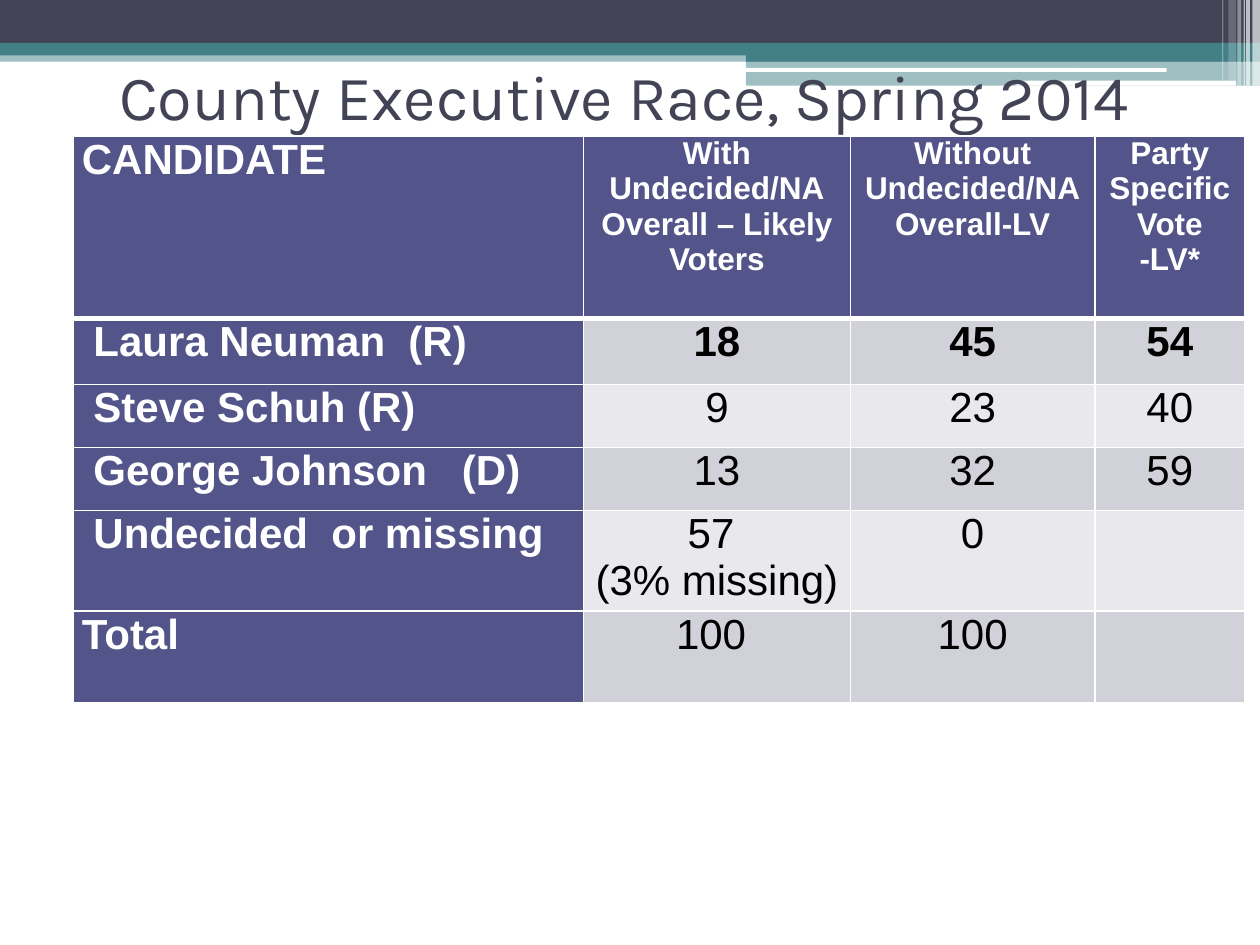
from lxml.etree import SubElement
from pptx import Presentation
from pptx.dml.color import RGBColor
from pptx.enum.shapes import MSO_SHAPE
from pptx.enum.text import MSO_ANCHOR, PP_ALIGN
from pptx.oxml.ns import qn
from pptx.util import Inches, Pt

COLORS = {
    "slate": "424456",
    "teal": "438086",
    "white": "FFFFFF",
    "black": "000000",
    "indigo": "53548A",
    "band_dark": "D1D1DA",
    "band_light": "E9E9ED",
}

# left, top, width, height, color, opacity in percent
BANNER_BARS = [
    (0, 0.4, 10, 0.09, "teal", 50),
    (0, 0, 10, 0.34, "slate", 100),
    (0, 0.34, 10, 0.1, "teal", 100),
    (5.92, 0.39, 4.08, 0.1, "teal", 100),
    (5.92, 0.48, 4.08, 0.2, "teal", 50),
]
BANNER_LINES = [(5.91, 0.54, 3.35, 0.03), (8.06, 0.64, 1.75, 0.04)]
# left, width, height, opacity in percent
BANNER_STRIPES = [
    (9.94, 0.06, 0.68, 65),
    (9.89, 0.03, 0.68, 65),
    (9.87, 0.01, 0.68, 60),
    (9.82, 0.03, 0.68, 40),
    (9.75, 0.06, 0.64, 20),
    (9.7, 0.01, 0.64, 30),
]

COLUMN_WIDTHS = [4.05, 2.12, 1.94, 1.19]
ROW_HEIGHTS = [1.45, 0.52, 0.5, 0.5, 0.73, 0.73]
# "\n" starts a paragraph, "\v" breaks a line
RESULTS = [
    ["CANDIDATE", "With Undecided/NA\nOverall – Likely Voters",
     "Without Undecided/NA\vOverall-LV", "Party Specific Vote -LV*"],
    [" Laura Neuman  (R)", "18", "45", "54"],
    [" Steve Schuh (R)", "9", "23", "40"],
    [" George Johnson   (D)", "13", "32", "59"],
    [" Undecided  or missing", "57 \n(3% missing)", "0", ""],
    ["Total", "100 ", "100", ""],
]


def rgb(color):
    return RGBColor.from_string(COLORS[color])


def write_text(frame, text, *, size, color, font="Arial", bold=False, align=PP_ALIGN.LEFT):
    frame.word_wrap = True
    frame.text = text
    for paragraph in frame.paragraphs:
        paragraph.alignment = align
        for run in paragraph.runs:
            run.font.name = font
            run.font.size = Pt(size)
            run.font.bold = bold
            run.font.color.rgb = rgb(color)


def add_bar(slide, left, top, width, height, color, opacity=100, kind=MSO_SHAPE.RECTANGLE):
    shape = slide.shapes.add_shape(
        kind, Inches(left), Inches(top), Inches(width), Inches(height))
    shape.shadow.inherit = False
    shape.line.fill.background()
    shape.fill.solid()
    shape.fill.fore_color.rgb = rgb(color)
    if opacity < 100:
        color_element = shape.fill._xPr.find(qn("a:solidFill"))[0]
        SubElement(color_element, qn("a:alpha"), val=str(opacity * 1000))


def add_banner(slide, left, top):
    for x, y, width, height, color, opacity in BANNER_BARS:
        add_bar(slide, left + x, top + y, width, height, color, opacity)
    for x, y, width, height in BANNER_LINES:
        add_bar(slide, left + x, top + y, width, height, "white",
                kind=MSO_SHAPE.ROUNDED_RECTANGLE)
    for x, width, height, opacity in BANNER_STRIPES:
        add_bar(slide, left + x, top, width, height, "white", opacity)


def add_title(slide, left, top, width, height):
    box = slide.shapes.add_textbox(Inches(left), Inches(top), Inches(width), Inches(height))
    box.text_frame.vertical_anchor = MSO_ANCHOR.MIDDLE
    write_text(box.text_frame, "County Executive Race, Spring 2014",
               size=36, color="slate", font="Karla", align=PP_ALIGN.CENTER)


def set_borders(cell, top=1, bottom=1):
    """Draw white borders; call before the cell's fill, which must follow them."""
    properties = cell._tc.get_or_add_tcPr()
    for side, width in (("L", 1), ("R", 1), ("T", top), ("B", bottom)):
        line = SubElement(properties, qn(f"a:ln{side}"), w=str(Pt(width)))
        fill = SubElement(line, qn("a:solidFill"))
        SubElement(fill, qn("a:srgbClr"), val=COLORS["white"])


def fill_cell(cell, text, row, column):
    is_label = row == 0 or column == 0
    cell.margin_left = cell.margin_right = Inches(0.07)
    cell.margin_top = cell.margin_bottom = 0
    set_borders(cell, top=3 if row == 1 else 1, bottom=3 if row == 0 else 1)
    cell.fill.solid()
    band = "band_dark" if row % 2 else "band_light"
    cell.fill.fore_color.rgb = rgb("indigo" if is_label else band)
    write_text(cell.text_frame, text,
               size=18 if row == 0 and column > 0 else 24,
               color="white" if is_label else "black",
               bold=is_label or row == 1,
               align=PP_ALIGN.CENTER if column else PP_ALIGN.LEFT)


def add_results_table(slide, left, top):
    table = slide.shapes.add_table(
        len(ROW_HEIGHTS), len(COLUMN_WIDTHS), Inches(left), Inches(top),
        Inches(sum(COLUMN_WIDTHS)), Inches(sum(ROW_HEIGHTS))).table
    for column, width in zip(table.columns, COLUMN_WIDTHS):
        column.width = Inches(width)
    for row, height in zip(table.rows, ROW_HEIGHTS):
        row.height = Inches(height)
    # Row 5 shares the dark band with the odd rows
    for row, texts in enumerate(RESULTS):
        for column, text in enumerate(texts):
            fill_cell(table.cell(row, column), text, row, column)


def main():
    presentation = Presentation()
    presentation.slide_width = Inches(10)
    presentation.slide_height = Inches(7.5)
    slide = presentation.slides.add_slide(presentation.slide_layouts[6])
    add_banner(slide, 0, 0)
    add_title(slide, 0.58, 0.42, 8.75, 0.67)
    add_results_table(slide, 0.58, 1.08)
    presentation.save("out.pptx")


if __name__ == "__main__":
    main()
